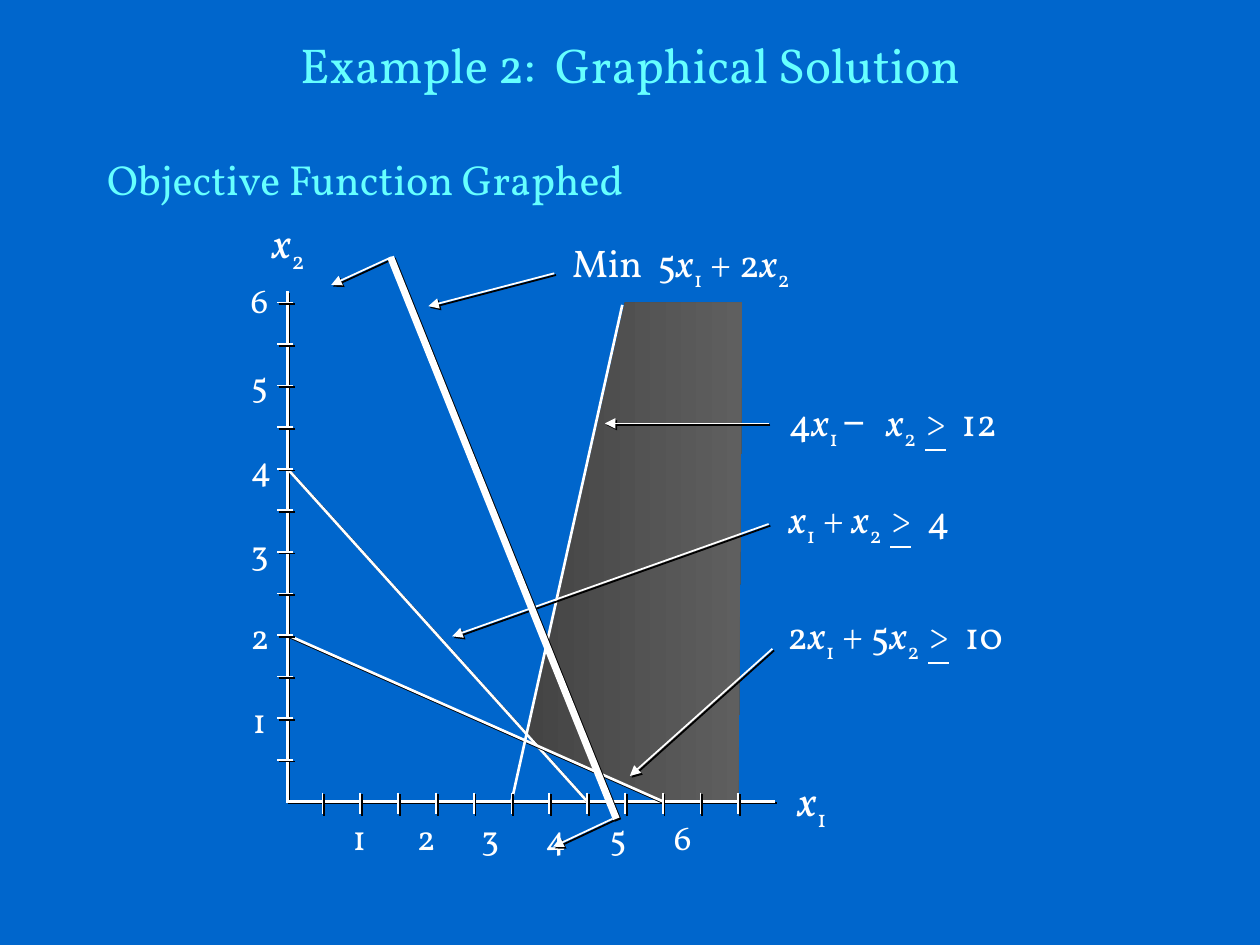
from typing import NamedTuple

from pptx import Presentation, util as u
from pptx.dml.color import RGBColor
from pptx.enum import shapes, text
from pptx.oxml import parse_xml
from pptx.oxml.ns import nsdecls, qn

WHITE = RGBColor(0xFF, 0xFF, 0xFF)
CYAN = RGBColor(0x66, 0xFF, 0xFF)
BLUE = RGBColor(0x00, 0x66, 0xCC)
DARK = RGBColor(0x44, 0x44, 0x44)
GREY = RGBColor(0x5F, 0x5F, 0x5F)
FONT = "Vollkorn"
LEFT, BASE = 2.26, 6.36
COL, ROW = 0.3, 0.33
TICKS = 12
AXIS = 0.07
PITCH = 0.51


class Line(NamedTuple):
    start: tuple[float, float]
    end: tuple[float, float]
    width: float = 1
    arrow: bool = False
    shade: bool = True


class Label(NamedTuple):
    box: tuple[float, float, float, float]
    runs: tuple[tuple[str, str], ...]
    size: int = 22


X1 = (("x", "italic"), ("1", "sub"))
X2 = (("x", "italic"), ("2", "sub"))
X2_GE = (("x", "italic"), ("2  ", "sub"), (">", "under"))

REGION = [(6.43, 1.64), (9, 12), (12.1, 12), (12, 0), (10, 0), (6.73, 1.3)]

GRAPH = [
    Line((AXIS, 12.27), (AXIS, -0.03), 1.5),
    Line((AXIS, 0), (12.97, 0), 1.5),
    Line((AXIS, 8), (8, 0), 1.5),
    Line((AXIS, 4), (10, 0), 1.5),
    Line((6, 0), (8.93, 11.94), 1.5, shade=False),
    Line((12.8, 9.09), (8.47, 9.09), arrow=True),
    Line((12.8, 6.67), (4.43, 3.97), arrow=True),
    Line((12.9, 3.67), (9.13, 0.61), arrow=True),
    Line((7.13, 12.7), (3.8, 11.91), arrow=True),
    *(Line((n, 0.21), (n, -0.3)) for n in range(1, TICKS + 1)),
    *(Line((-0.2, n), (0.23, n)) for n in range(1, TICKS + 1)),
    Line((8.67, -0.42), (7.1, -1.09), arrow=True),
    Line((2.83, 13.09), (1.23, 12.42), arrow=True),
    Line((8.77, -0.42), (2.8, 13.09), 4),
]

LABELS = [
    Label((2.02, 1.65, 0.56, 0.54), X2, 24),
    Label((6.19, 6.08, 0.56, 0.54), X1, 24),
    Label((4.4, 1.83, 2.15, 0.51),
          (("Min  5", ""), *X1, (" + 2", ""), *X2)),
    Label((6.12, 3.09, 2.14, 0.51),
          (("4", ""), ("x", "italic"), ("1 ", "sub"), ("−  ", "minus"),
           *X2_GE, ("  12", ""))),
    Label((6.12, 3.86, 1.78, 0.51),
          (*X1, (" + ", ""), *X2_GE, ("  4", ""))),
    Label((6.11, 4.78, 2.24, 0.51),
          (("2", ""), *X1, (" + 5", ""), *X2_GE, ("  10", ""))),
]


def spot(point: tuple[float, float]) -> tuple[int, int]:
    col, row = point
    return u.Inches(LEFT + COL * col), u.Inches(BASE - ROW * row)


def glow():
    return parse_xml(
        f'<a:effectLst {nsdecls("a")}><a:outerShdw dist="17961" dir="2700000">'
        '<a:srgbClr val="000000"/></a:outerShdw></a:effectLst>')


def style(run, size: float, color: RGBColor = WHITE, font: str = FONT) -> None:
    run.font.size = u.Pt(size)
    run.font.color.rgb = color
    run.font.name = font


def draw(slide, line: Line) -> None:
    link = slide.shapes.add_connector(
        shapes.MSO_CONNECTOR.STRAIGHT, *spot(line.start), *spot(line.end))
    link.line.color.rgb = WHITE
    link.line.width = u.Pt(line.width)
    props = link._element.spPr
    if line.arrow:
        props.find(qn("a:ln")).append(
            parse_xml(f'<a:tailEnd {nsdecls("a")} type="triangle"/>'))
    props.append(glow() if line.shade
                 else parse_xml(f'<a:effectLst {nsdecls("a")}/>'))


def fill_zone(slide) -> None:
    first, *rest = map(spot, REGION)
    path = slide.shapes.build_freeform(*first)
    path.add_line_segments(rest)
    zone = path.convert_to_shape()
    zone.shadow.inherit = False
    zone.line.fill.background()
    zone.fill.gradient()
    zone.fill.gradient_angle = 0
    for stop, color in zip(zone.fill.gradient_stops, (DARK, GREY)):
        stop.color.rgb = color


def add_box(slide, box: tuple[float, float, float, float]):
    return slide.shapes.add_textbox(*map(u.Inches, box)).text_frame


def write(slide, label: Label) -> None:
    frame = add_box(slide, label.box)
    frame.word_wrap = False
    frame.auto_size = text.MSO_AUTO_SIZE.SHAPE_TO_FIT_TEXT
    frame.margin_left = frame.margin_right = u.Inches(0.14)
    frame.margin_top = frame.margin_bottom = u.Inches(0.07)
    for words, kind in label.runs:
        run = frame.paragraphs[0].add_run()
        run.text = words
        style(run, label.size, font="Arial" if kind == "minus" else FONT)
        run.font.italic = kind == "italic"
        run.font.underline = kind == "under"
        props = run._r.get_or_add_rPr()
        if kind == "sub":
            props.set("baseline", "-25000")
        props.find(qn("a:solidFill")).addnext(glow())


def number(slide) -> None:
    marks = [str(n) for n in range(1, 7)]
    across = add_box(slide, (2.7, 6.42, 3.82, 0.43))
    across.word_wrap = True
    across.text = "\t".join(marks)
    stops = "".join(f'<a:tab pos="{u.Inches(PITCH * n)}" algn="l"/>'
                    for n in range(1, 6))
    across.paragraphs[0]._p.get_or_add_pPr().append(
        parse_xml(f'<a:tabLst {nsdecls("a")}>{stops}</a:tabLst>'))
    up = add_box(slide, (1.89, 2.16, 0.34, 3.77))
    up.word_wrap = False
    up.text = "\n".join(reversed(marks))
    for par in up.paragraphs:
        par.alignment = text.PP_ALIGN.CENTER
        par.space_after = u.Pt(24)
    for par in (*across.paragraphs, *up.paragraphs):
        for run in par.runs:
            style(run, 20)


def head(shape, box: tuple[float, float, float, float], words: str,
         size: int, align, anchor) -> None:
    shape.left, shape.top, shape.width, shape.height = map(u.Inches, box)
    frame = shape.text_frame
    frame.text = words
    frame.auto_size = text.MSO_AUTO_SIZE.NONE
    frame.vertical_anchor = anchor
    par = frame.paragraphs[0]
    par.alignment = align
    style(par.runs[0], size, CYAN)


def main() -> None:
    deck = Presentation()
    deck.slide_width, deck.slide_height = u.Inches(10), u.Inches(7.5)
    slide = deck.slides.add_slide(deck.slide_layouts[1])
    slide.background.fill.solid()
    slide.background.fill.fore_color.rgb = BLUE
    head(slide.shapes.title, (0.75, 0.06, 8.5, 0.89),
         "Example 2:  Graphical Solution", 28,
         text.PP_ALIGN.CENTER, text.MSO_ANCHOR.MIDDLE)
    body = slide.placeholders[1]
    head(body, (0.75, 1.17, 5.52, 0.65), "Objective Function Graphed", 24,
         text.PP_ALIGN.LEFT, text.MSO_ANCHOR.TOP)
    props = body.text_frame.paragraphs[0]._p.get_or_add_pPr()
    props.set("marL", "0")
    props.set("indent", "0")
    props.append(parse_xml(f'<a:buNone {nsdecls("a")}/>'))
    fill_zone(slide)
    number(slide)
    for line in GRAPH:
        draw(slide, line)
    for label in LABELS:
        write(slide, label)
    deck.save("out.pptx")


if __name__ == "__main__":
    main()
